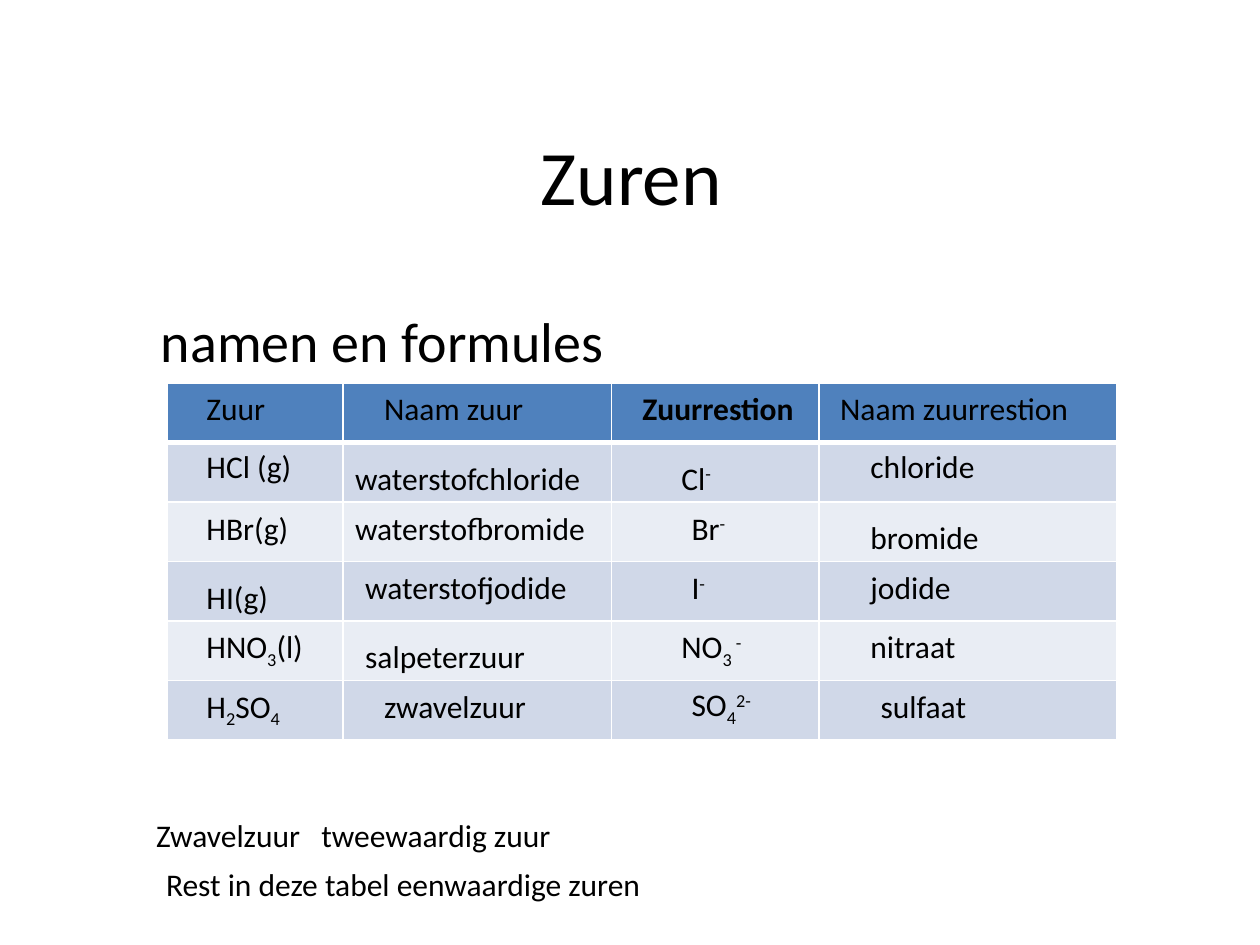
from lxml.etree import SubElement
from pptx import Presentation
from pptx.dml.color import RGBColor
from pptx.enum.text import MSO_ANCHOR, MSO_AUTO_SIZE, PP_ALIGN
from pptx.oxml.ns import qn
from pptx.util import Pt

COLORS = {"text": "000000", "header": "4F81BD", "odd": "D0D8E8",
          "even": "E9EDF4", "border": "FFFFFF"}
FONT = "Calibri"
BASELINES = {"_": "-25000", "^": "30000"}

TABLE_LEFT, TABLE_TOP, ROW_HEIGHT = 95.8, 218.9, 34
COLUMN_WIDTHS = [100.1, 153.4, 118.8, 169.9]
ROW_COUNT = 6

# One list per table column: (text, left, top, width).
# In a text, "|" parts the runs; "_" lowers a run and "^" raises it.
LABELS = [
    [("Zuur", 110.9, 218.9, 96.5), ("HCl (g)", 110.9, 252, 96.5),
     ("HBr(g)", 110.9, 287.3, 113), ("HI(g)", 110.9, 326.9, 90.7),
     ("HNO|_3|(l)", 110.9, 355, 141.8), ("H|_2|SO|_4", 110.9, 388.8, 118.8)],
    [("Naam zuur", 212.4, 218.9, 102.2), ("waterstofchloride", 195.8, 258.5, 147.6),
     ("waterstofbromide", 195.8, 287.3, 147.6), ("waterstofjodide", 201.6, 321.1, 136.1),
     ("salpeterzuur", 201.6, 360.7, 124.6), ("zwavelzuur", 212.4, 388.8, 141.8)],
    [("Zuurrestion", 360, 218.9, 118.8), ("Cl|^-", 382.3, 258.5, 56.9),
     ("Br|^-", 388.1, 287.3, 73.4), ("I|^-", 388.1, 321.1, 67.7),
     ("NO|_3 |^-", 382.3, 355, 113), ("SO|_4|^2-", 388.1, 388.1, 90.7)],
    [("Naam zuurrestion", 473, 218.9, 164.2), ("chloride", 490.3, 252, 118.8),
     ("bromide", 490.3, 292.3, 124.6), ("jodide", 490.3, 321.1, 136.1),
     ("nitraat", 490.3, 355, 158.4), ("sulfaat", 496.1, 388.8, 130.3)],
]


def write_text(shape, text, size=18, bold=False, align=PP_ALIGN.LEFT):
    paragraph = shape.text_frame.paragraphs[0]
    paragraph.alignment = align
    for part in text.split("|"):
        baseline = BASELINES.get(part[0])
        run = paragraph.add_run()
        run.text = part[1:] if baseline else part
        run.font.name = FONT
        run.font.size = Pt(size)
        run.font.bold = bold
        run.font.color.rgb = RGBColor.from_string(COLORS["text"])
        if baseline:
            run._r.get_or_add_rPr().set("baseline", baseline)
    return paragraph


def add_label(slide, text, left, top, width, **text_format):
    shape = slide.shapes.add_textbox(Pt(left), Pt(top), Pt(width), Pt(28.8))
    shape.text_frame.word_wrap = True
    shape.text_frame.auto_size = MSO_AUTO_SIZE.SHAPE_TO_FIT_TEXT
    return write_text(shape, text, **text_format)


def add_tab_stop(paragraph, position):
    tab_list = SubElement(paragraph._p.get_or_add_pPr(), qn("a:tabLst"))
    SubElement(tab_list, qn("a:tab"), pos=str(Pt(position)), algn="l")


def format_cell(cell, fill, bottom_width):
    properties = cell._tc.get_or_add_tcPr()
    for side, width in (("lnL", 1), ("lnR", 1), ("lnT", 1), ("lnB", bottom_width)):
        line = SubElement(properties, qn(f"a:{side}"), w=str(Pt(width)))
        solid = SubElement(line, qn("a:solidFill"))
        SubElement(solid, qn("a:srgbClr"), val=COLORS["border"])
    cell.fill.solid()
    cell.fill.fore_color.rgb = RGBColor.from_string(COLORS[fill])


def add_grid(slide):
    table = slide.shapes.add_table(
        ROW_COUNT, len(COLUMN_WIDTHS), Pt(TABLE_LEFT), Pt(TABLE_TOP),
        Pt(sum(COLUMN_WIDTHS)), Pt(ROW_COUNT * ROW_HEIGHT)).table
    for column, width in zip(table.columns, COLUMN_WIDTHS):
        column.width = Pt(width)
    for index, row in enumerate(table.rows):
        row.height = Pt(ROW_HEIGHT)
        fill = "header" if index == 0 else "odd" if index % 2 else "even"
        for cell in row.cells:
            format_cell(cell, fill, 3 if index == 0 else 1)


def add_title(slide, text):
    title = slide.shapes.title
    title.left, title.top, title.width, title.height = Pt(36.7), Pt(54.7), Pt(648), Pt(90)
    title.text_frame.vertical_anchor = MSO_ANCHOR.MIDDLE
    write_text(title, text, size=44, align=PP_ALIGN.CENTER)


def add_subtitle(slide, text):
    shape = slide.shapes.add_textbox(Pt(36), Pt(126), Pt(648), Pt(356.4))
    frame = shape.text_frame
    frame.word_wrap = True
    frame.margin_left, frame.margin_top = Pt(56), Pt(49)
    write_text(shape, text, size=32)


def main():
    presentation = Presentation()
    presentation.slide_width, presentation.slide_height = Pt(720), Pt(540)
    slide = presentation.slides.add_slide(presentation.slide_layouts[5])

    # Headings
    add_title(slide, "Zuren")
    add_subtitle(slide, "namen en formules")

    # Table of acids, with its labels laid over the grid
    add_grid(slide)
    for column in LABELS:
        for text, left, top, width in column:
            add_label(slide, text, left, top, width, bold=text == "Zuurrestion")

    # Remarks below the table
    remark = add_label(slide, "Zwavelzuur\ttweewaardig zuur", 82.1, 463, 538.6)
    add_tab_stop(remark, 94.5)
    add_label(slide, "Rest in deze tabel eenwaardige zuren", 87.8, 491, 380.2)

    presentation.save("out.pptx")


if __name__ == "__main__":
    main()
